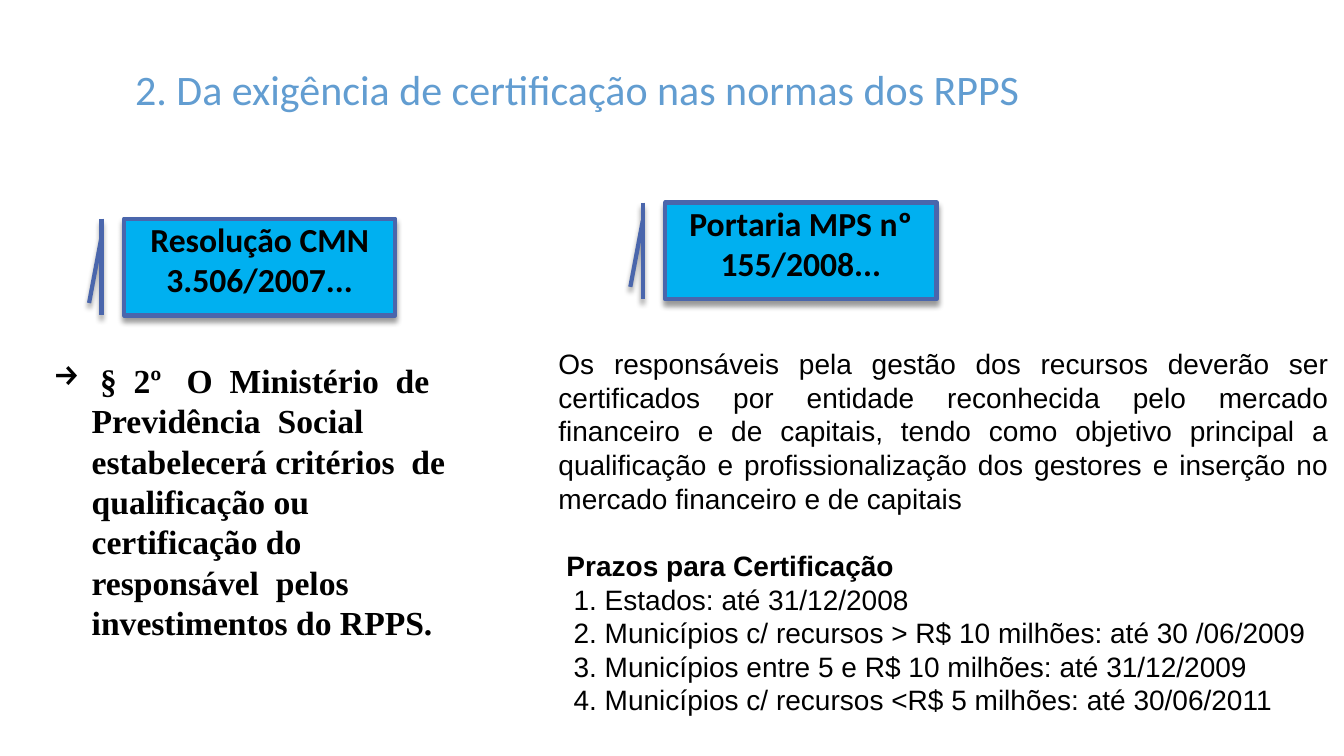
from dataclasses import dataclass

from lxml.etree import SubElement
from pptx import Presentation
from pptx.dml.color import RGBColor
from pptx.enum.shapes import MSO_SHAPE
from pptx.enum.text import MSO_ANCHOR, PP_ALIGN
from pptx.oxml.ns import qn
from pptx.util import Inches, Pt

COLORS = {"title": "629DD1", "text": "000000", "box": "00B0F0", "line": "4A66AC"}
WIDTH, HEIGHT = Inches(13.33), Inches(7.5)
CALLOUT_ADJUSTMENTS = (0.188, -0.083, 0.872, -0.129)


@dataclass(frozen=True)
class Area:
    left: float
    top: float
    width: float
    height: float

    def emu(self) -> tuple[int, int, int, int]:
        return (int(WIDTH * self.left / 100), int(HEIGHT * self.top / 100),
                int(WIDTH * self.width / 100), int(HEIGHT * self.height / 100))


@dataclass(frozen=True)
class Style:
    font: str
    size: float
    bold: bool = False
    color: str = "text"


@dataclass(frozen=True)
class Para:
    text: str
    style: Style
    align: PP_ALIGN = PP_ALIGN.LEFT
    margin: float = 0
    hanging: float = 0
    bullet: str = ""
    before: float = 0


@dataclass(frozen=True)
class Callout:
    area: Area
    text: str


TITLE = Style("Calibri", 30, color="title")
LABEL = Style("Calibri", 24, bold=True)
QUOTE = Style("Times New Roman", 24, bold=True)
BODY = Style("Arial", 20)
HEADING = Style("Arial", 20, bold=True)

CALLOUTS = [
    Callout(Area(9.23, 28.93, 20.18, 12.8), "Resolução CMN 3.506/2007..."),
    Callout(Area(49.5, 26.8, 20.18, 12.8), "Portaria MPS nº 155/2008..."),
]
DEADLINES = [
    "1. Estados: até 31/12/2008",
    "2. Municípios c/ recursos > R$ 10 milhões: até 30 /06/2009",
    "3. Municípios entre 5 e R$ 10 milhões: até 31/12/2009",
    "4. Municípios c/ recursos <R$ 5 milhões: até 30/06/2011",
]
RULE = Para(
    "Os responsáveis pela gestão dos recursos deverão ser certificados por "
    "entidade reconhecida pelo mercado financeiro e de capitais, tendo como "
    "objetivo principal a qualificação e profissionalização dos gestores e "
    "inserção no mercado financeiro e de capitais", BODY, PP_ALIGN.JUSTIFY)
RESOLUTION = Para(
    " §  2º   O  Ministério  de  Previdência  Social  estabelecerá critérios  de  "
    "qualificação ou  certificação do  responsável  pelos investimentos do RPPS.",
    QUOTE, margin=0.85, hanging=0.38, bullet="→")


def rgb(name: str) -> RGBColor:
    return RGBColor.from_string(COLORS[name])


def write(tf, paras: list[Para], insets: tuple[float, float, float, float]) -> None:
    tf.word_wrap = True
    tf.vertical_anchor = MSO_ANCHOR.TOP
    tf.margin_left, tf.margin_top, tf.margin_right, tf.margin_bottom = map(Inches, insets)
    for i, para in enumerate(paras):
        p = tf.paragraphs[0] if i == 0 else tf.add_paragraph()
        p.alignment = para.align
        if para.before:
            p.space_before = Pt(para.before)
        pPr = p._p.get_or_add_pPr()
        pPr.set("marL", str(Inches(para.margin)))
        pPr.set("indent", str(-Inches(para.hanging)))
        if para.bullet:
            SubElement(pPr, qn("a:buChar")).set("char", para.bullet)
        r = p.add_run()
        r.text = para.text
        r.font.name = para.style.font
        r.font.size = Pt(para.style.size)
        r.font.bold = para.style.bold
        r.font.color.rgb = rgb(para.style.color)


def add_text(s, area: Area, paras: list[Para],
             insets: tuple[float, float, float, float] = (0, 0, 0, 0)) -> None:
    write(s.shapes.add_textbox(*area.emu()).text_frame, paras, insets)


def add_shadow(sp) -> None:
    sp.shadow.inherit = False
    effects = sp._element.spPr.find(qn("a:effectLst"))
    shadow = SubElement(effects, qn("a:outerShdw"), blurRad=str(Pt(4)),
                        dist=str(Pt(3)), dir="5400000", rotWithShape="0")
    color = SubElement(shadow, qn("a:srgbClr"), val=COLORS["text"])
    SubElement(color, qn("a:alpha"), val="40000")


def add_callout(s, callout: Callout) -> None:
    sp = s.shapes.add_shape(MSO_SHAPE.LINE_CALLOUT_1_BORDER_AND_ACCENT_BAR,
                            *callout.area.emu())
    for i, value in enumerate(CALLOUT_ADJUSTMENTS):
        sp.adjustments[i] = value
    sp.fill.solid()
    sp.fill.fore_color.rgb = rgb("box")
    sp.line.color.rgb = rgb("line")
    sp.line.width = Pt(3)
    add_shadow(sp)
    write(sp.text_frame, [Para(callout.text, LABEL, PP_ALIGN.CENTER)], (0, 0, 0, 0))


def main() -> None:
    prs = Presentation()
    prs.slide_width, prs.slide_height = WIDTH, HEIGHT
    s = prs.slides.add_slide(prs.slide_layouts[6])
    add_text(s, Area(41.55, 45.87, 57.3, 52),
             [RULE, Para("Prazos para Certificação", HEADING, margin=0.08, before=24)]
             + [Para(text, BODY, PP_ALIGN.JUSTIFY, margin=0.15) for text in DEADLINES])
    add_text(s, Area(3.15, 7.73, 79.65, 14.8),
             [Para("2. Da exigência de certificação nas normas dos RPPS", TITLE,
                   PP_ALIGN.CENTER)], (0.1, 0.05, 0.1, 0.05))
    add_text(s, Area(0.45, 47.6, 34.88, 48), [RESOLUTION], (0, 0, 0.04, 0))
    for callout in CALLOUTS:
        add_callout(s, callout)
    prs.save("out.pptx")


if __name__ == "__main__":
    main()
